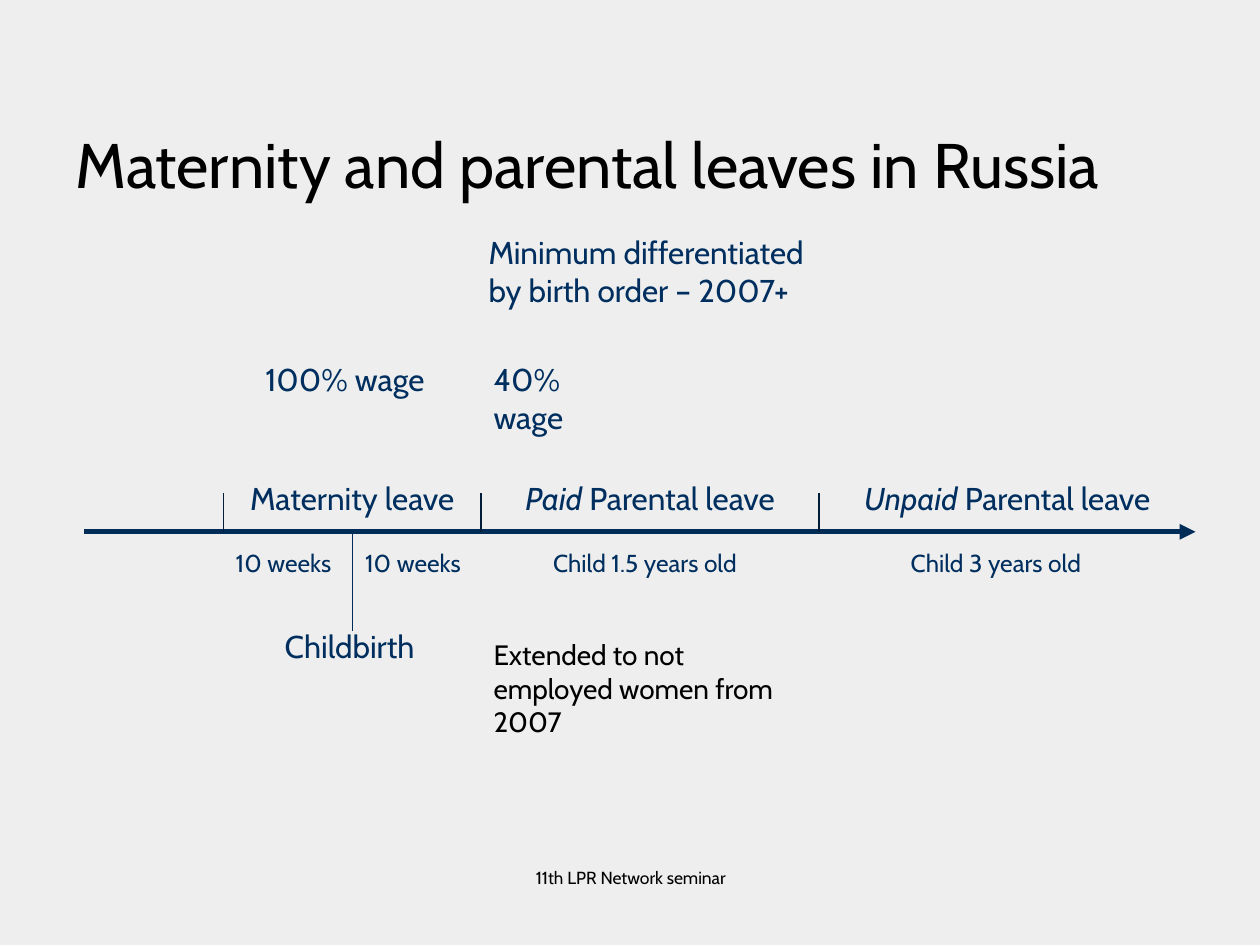
from dataclasses import dataclass

from lxml.etree import SubElement
from pptx import Presentation
from pptx.dml.color import RGBColor
from pptx.enum.shapes import MSO_CONNECTOR
from pptx.enum.text import MSO_ANCHOR, MSO_AUTO_SIZE, PP_ALIGN
from pptx.oxml.ns import qn
from pptx.util import Cm, Pt

FONT = "Cabin"
BLACK, NAVY, AXIS, TICK = "000000", "002F5F", "002C58", "001D3A"
AXIS_LEFT, AXIS_RIGHT, AXIS_Y = 1.7, 24.1, 10.72
LEAVE_START, BIRTH, PAID_START, UNPAID_START = 4.5, 7.11, 9.7, 16.51
TICK_TOP, BIRTH_BOTTOM = 9.93, 12.73
WAGE_Y, PERIOD_Y, LENGTH_Y = 7.14, 9.53, 10.92


@dataclass
class Label:
    text: str
    left: float
    top: float
    width: float
    height: float = 1.02
    size: float = 18
    color: str = NAVY
    lead: str = ""
    align: PP_ALIGN = PP_ALIGN.LEFT
    anchor: MSO_ANCHOR = MSO_ANCHOR.TOP
    wrap: bool = False


@dataclass
class Line:
    x1: float
    y1: float
    x2: float
    y2: float
    color: str = TICK
    width: float = 0.75
    arrow: bool = False


def rgb(color: str) -> RGBColor:
    return RGBColor.from_string(color)


def add_label(s, label: Label) -> None:
    sp = s.shapes.add_textbox(Cm(label.left), Cm(label.top), Cm(label.width), Cm(label.height))
    tf = sp.text_frame
    frame = {"word_wrap": label.wrap, "auto_size": MSO_AUTO_SIZE.NONE, "vertical_anchor": label.anchor}
    for name, value in frame.items():
        setattr(tf, name, value)
    p = tf.paragraphs[0]
    p.alignment = label.align
    for text, italic in ((label.lead, True), (label.text, False)):
        if not text:
            continue
        r = p.add_run()
        r.text = text
        for name, value in {"name": FONT, "size": Pt(label.size), "italic": italic}.items():
            setattr(r.font, name, value)
        r.font.color.rgb = rgb(label.color)


def add_line(s, line: Line) -> None:
    ends = (Cm(v) for v in (line.x1, line.y1, line.x2, line.y2))
    sp = s.shapes.add_connector(MSO_CONNECTOR.STRAIGHT, *ends)
    sp.line.color.rgb = rgb(line.color)
    sp.line.width = Pt(line.width)
    if line.arrow:
        SubElement(sp.line._get_or_add_ln(), qn("a:tailEnd"), type="triangle")
    SubElement(sp._element.spPr, qn("a:effectLst"))


def period(text: str, start: float, end: float, lead: str = "") -> Label:
    return Label(text, start, PERIOD_Y, end - start, lead=lead, align=PP_ALIGN.CENTER)


def duration(text: str, left: float, width: float) -> Label:
    return Label(text, left, LENGTH_Y, width, 0.84, 14)


LINES = [
    Line(AXIS_LEFT, AXIS_Y, AXIS_RIGHT, AXIS_Y, AXIS, 3, True),
    Line(BIRTH, AXIS_Y, BIRTH, BIRTH_BOTTOM, AXIS),
    *(Line(x, AXIS_Y, x, TICK_TOP) for x in (LEAVE_START, PAID_START, UNPAID_START)),
]

LABELS = [
    Label("Maternity and parental leaves in Russia", 1.27, 1, 22.86, 3.17, 36, BLACK,
          anchor=MSO_ANCHOR.BOTTOM, wrap=True),
    Label("11th LPR Network seminar", 8.69, 17.35, 8.05, 1.32, 10, BLACK,
          align=PP_ALIGN.CENTER, wrap=True),
    Label("Childbirth", 5.49, 12.52, 3.2),
    period("Maternity leave", LEAVE_START, PAID_START),
    period(" Parental leave", PAID_START, UNPAID_START, "Paid"),
    period(" Parental leave", UNPAID_START, AXIS_RIGHT, "Unpaid"),
    duration("10 weeks", LEAVE_START, 2.6),
    duration("10 weeks", BIRTH, 2.6),
    duration("Child 1.5 years old", 10.9, 4.6),
    duration("Child 3 years old", 18.11, 4.19),
    Label("100% wage", 5.1, WAGE_Y, 3.84),
    Label("40% wage", PAID_START, WAGE_Y, 3, 1.8, wrap=True),
    Label("Extended to not employed women from 2007", PAID_START, BIRTH_BOTTOM, 6.81, 1.63, 16,
          BLACK, wrap=True),
    Label("Minimum differentiated by birth order – 2007+", 9.6, 4.57, 6.99, 1.8, wrap=True),
]


def main() -> None:
    prs = Presentation()
    prs.slide_width, prs.slide_height = Cm(25.4), Cm(19.05)
    s = prs.slides.add_slide(prs.slide_layouts[6])
    fill = s.background.fill
    fill.solid()
    fill.fore_color.rgb = rgb("EEEEEE")
    for line in LINES:
        add_line(s, line)
    for label in LABELS:
        add_label(s, label)
    prs.save("out.pptx")


if __name__ == "__main__":
    main()
